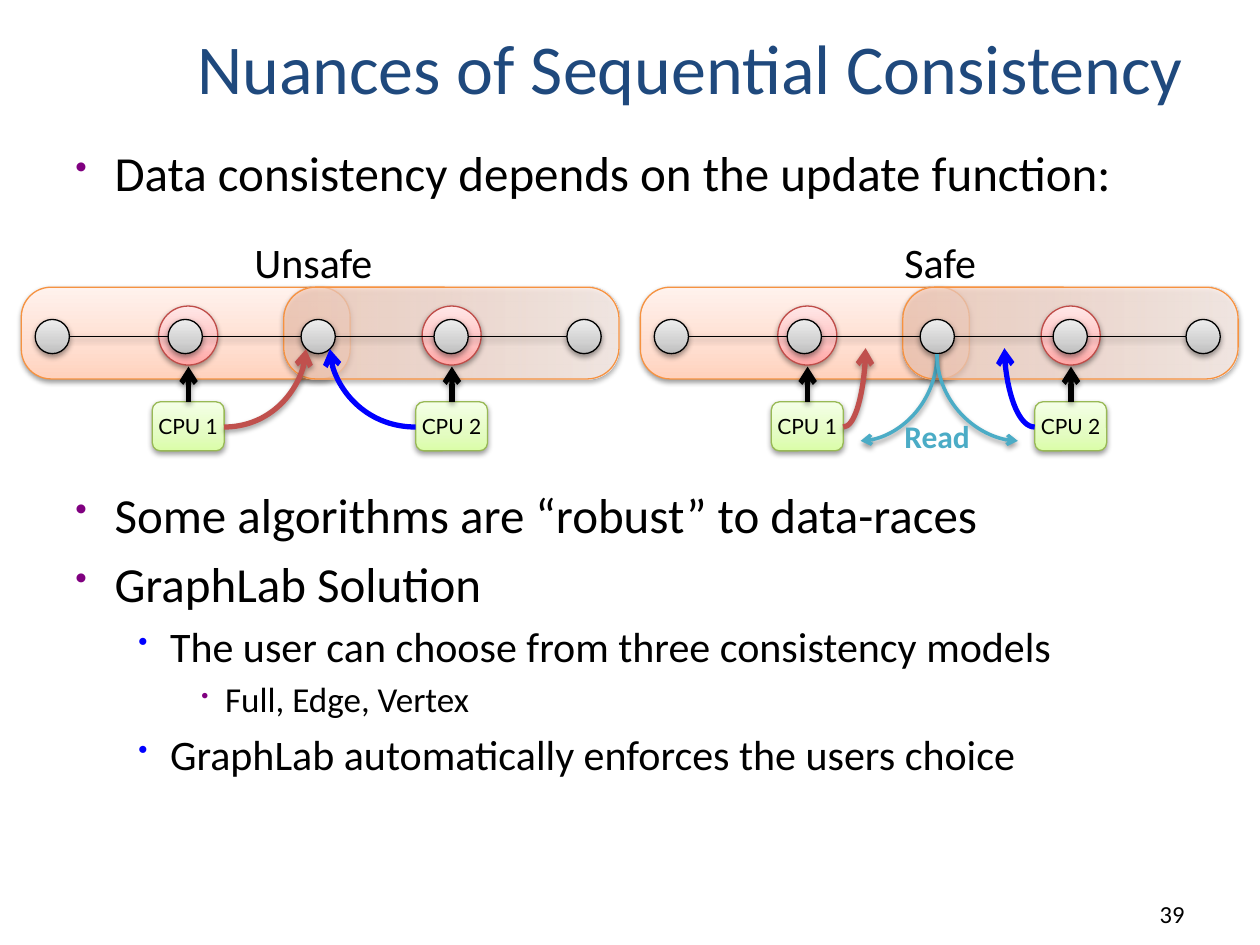
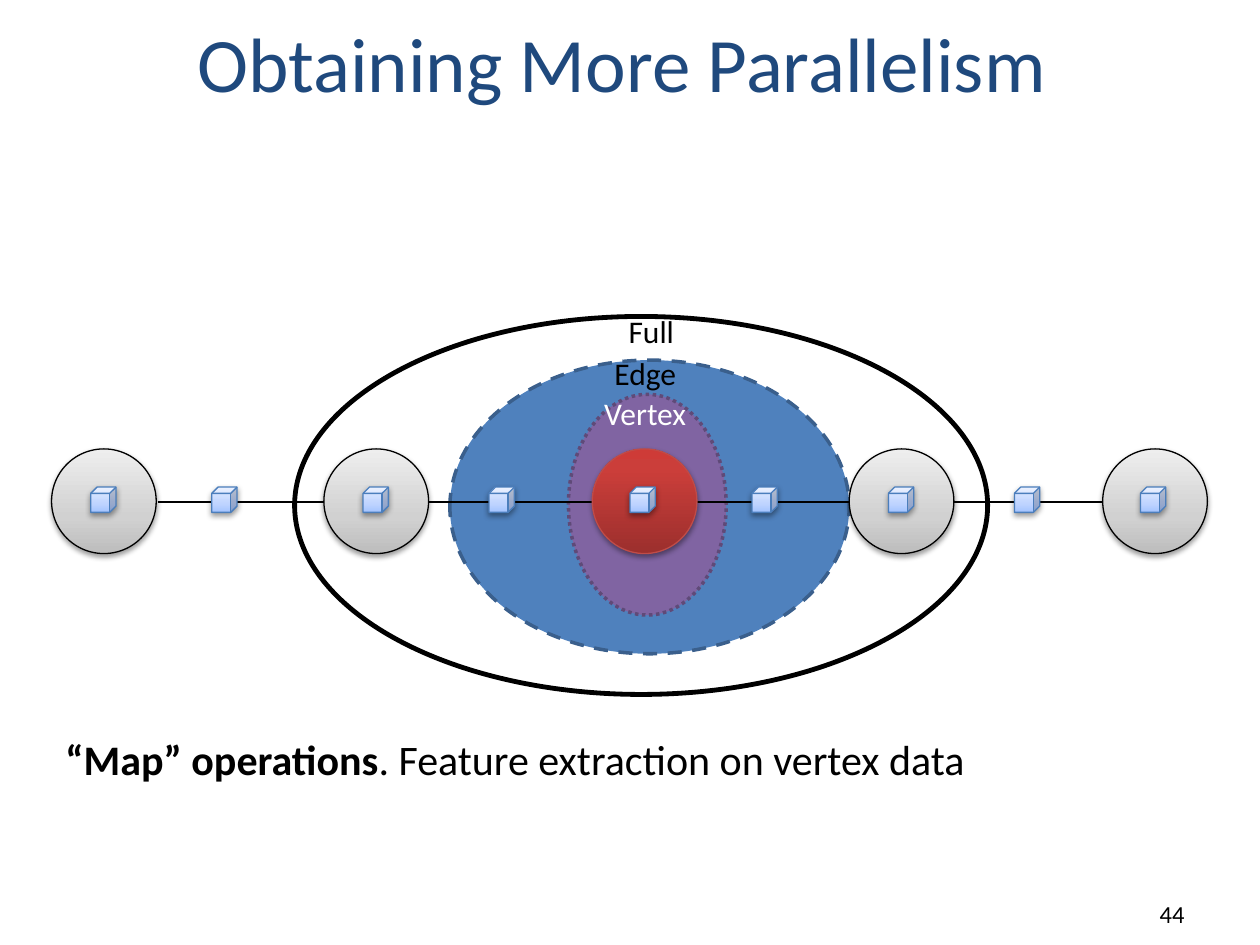
from pptx import Presentation
from pptx.dml.color import RGBColor
from pptx.enum.dml import MSO_LINE
from pptx.enum.shapes import MSO_CONNECTOR, MSO_SHAPE
from pptx.enum.text import MSO_ANCHOR, PP_ALIGN
from pptx.oxml import parse_xml
from pptx.oxml.ns import nsdecls, qn
from pptx.util import Cm, Pt

rgb = RGBColor.from_string

# Shared colours; gradients are lists of (position, colour, opacity) in percent
BLACK, TITLE, RED, BLUE, TEAL = "000000", "1F497D", "C0504D", "0000FF", "4BACC6"
PURPLE = "800080"
ORANGE = [(0, "FFD2BD", 100), (35, "FFDED0", 100), (100, "FFF2ED", 100)]
SHEER = [(0, "FFD2BD", 72), (35, "FFDED0", 70), (100, "FFF2ED", 80)]
PINK = [(0, "FFA6A5", 100), (35, "FFC0BF", 100), (100, "FFE7E7", 100)]
GREEN = [(0, "DAFDA7", 100), (35, "E4FCC2", 100), (100, "F5FFE7", 100)]
GREY = [(0, "BDBDBD", 100), (35, "D1D1D1", 100), (100, "EEEEEE", 100)]
CRIMSON = [(0, "9C2F2D", 100), (80, "CB3E3A", 100), (100, "CE3B37", 100)]
ICE = [(0, "A4C4FF", 100), (35, "BFD4FF", 100), (100, "E6EEFF", 100)]


def style(s, line, width=0.75, fill=None, angle=90, dash=None, arrow=None, shadow=True):
    """Set fill, line, arrowhead ("headEnd" or "tailEnd") and shadow."""
    sp_pr = s._element.spPr
    if isinstance(fill, str):
        s.fill.solid()
        s.fill.fore_color.rgb = rgb(fill)
    elif fill:
        s.fill.gradient()
        s.fill.gradient_angle = angle
        stops = sp_pr.find(qn("a:gradFill")).find(qn("a:gsLst"))
        for old in list(stops):
            stops.remove(old)
        for pos, color, opacity in fill:
            stops.append(parse_xml(
                f'<a:gs {nsdecls("a")} pos="{pos * 1000}"><a:srgbClr val="{color}">'
                f'<a:alpha val="{opacity * 1000}"/></a:srgbClr></a:gs>'))
    s.line.color.rgb = rgb(line)
    s.line.width = Pt(width)
    if dash:
        s.line.dash_style = dash
    if arrow:
        sp_pr.find(qn("a:ln")).append(parse_xml(f'<a:{arrow} {nsdecls("a")} type="arrow"/>'))
    effects = parse_xml(f'<a:effectLst {nsdecls("a")}/>')
    if shadow:
        effects.append(parse_xml(
            f'<a:outerShdw {nsdecls("a")} blurRad="40000" dist="20000" dir="5400000" '
            f'rotWithShape="0"><a:srgbClr val="{BLACK}"><a:alpha val="38000"/></a:srgbClr>'
            '</a:outerShdw>'))
    sp_pr.append(effects)


def write(tf, text, lead="", size=18, color=BLACK, font="Calibri", bold=False,
          align=PP_ALIGN.LEFT, anchor=MSO_ANCHOR.TOP, wrap=True):
    """Add a paragraph, with an optional bold lead, and return it."""
    p = tf.add_paragraph() if tf.text else tf.paragraphs[0]
    p.alignment = align
    tf.vertical_anchor = anchor
    tf.word_wrap = wrap
    for part, heavy in ((lead, True), (text, bold)):
        if part:
            r = p.add_run()
            r.text = part
            r.font.name = font
            r.font.size = Pt(size)
            r.font.bold = heavy
            r.font.color.rgb = rgb(color)
    return p


prs = Presentation()
prs.slide_width, prs.slide_height = Cm(25.4), Cm(19.05)

# Titles and page numbers
for title, size, page in (("Nuances of Sequential Consistency", 40, "39"),
                          ("Obtaining More Parallelism", 44, "44")):
    slide = prs.slides.add_slide(prs.slide_layouts[6])
    tb = slide.shapes.add_textbox(Cm(3.73), Cm(0.2), Cm(20.83), Cm(2.11))
    write(tb.text_frame, title, size=size, color=TITLE, anchor=MSO_ANCHOR.BOTTOM)
    tb = slide.shapes.add_textbox(Cm(18.85), Cm(17.58), Cm(5.28), Cm(1.27))
    write(tb.text_frame, page, size=14, align=PP_ALIGN.RIGHT, anchor=MSO_ANCHOR.BOTTOM)

# Slide 1: bullets, with room for the diagrams after the first
shapes = prs.slides[0].shapes
levels = [  # size, left margin, hanging indent, bullet colour, bullet percent
    (28, 0.79, 0.79, PURPLE, 70),
    (24, 1.91, 0.64, BLUE, 65),
    (20, 3.02, 0.48, PURPLE, 60),
]
bullets = [
    (0, 0, "Data consistency depends on the update function:"),
    (0, 162, "Some algorithms are “robust” to data-races"),
    (0, 5.6, "GraphLab Solution"),
    (1, 4.8, "The user can choose from three consistency models"),
    (2, 4, "Full, Edge, Vertex"),
    (1, 4.8, "GraphLab automatically enforces the users choice"),
]
tf = shapes.add_textbox(Cm(1.27), Cm(2.74), Cm(23.06), Cm(15.44)).text_frame
for level, before, text in bullets:
    size, margin, hang, color, percent = levels[level]
    p = write(tf, text, size=size)
    p.level = level
    p.space_before = Pt(before)
    pPr = p._p.get_or_add_pPr()
    pPr.set("marL", str(Cm(margin)))
    pPr.set("indent", str(-Cm(hang)))
    for xml in (f'<a:buClr {nsdecls("a")}><a:srgbClr val="{color}"/></a:buClr>',
                f'<a:buSzPct {nsdecls("a")} val="{percent * 1000}"/>',
                f'<a:buChar {nsdecls("a")} char="•"/>'):
        pPr.append(parse_xml(xml))

# Slide 1: the unsafe and safe diagrams
# Curves are (start x, start y, end x, end y, colour, width, arrow end, shadow)
unsafe_curves = [(4.52, 8.61, 6.17, 7.04, RED, 3, "tailEnd", True),
                 (8.38, 8.61, 6.65, 7.04, BLUE, 3, "tailEnd", False)]
safe_curves = [(4.52, 8.61, 4.97, 7.02, RED, 3, "tailEnd", True),
               (8.38, 8.61, 7.77, 7.02, BLUE, 3, "tailEnd", False),
               (4.87, 8.89, 6.41, 7.14, TEAL, 2, "headEnd", True),
               (8.04, 8.89, 6.41, 7.14, TEAL, 2, "headEnd", True)]
for left, label, label_x, label_w, curves in (
        (0, "Unsafe", 4.88, 2.92, unsafe_curves),
        (12.48, "Safe", 5.5, 1.98, safe_curves)):
    # Scope, active vertex and processor
    for i, (zone_x, zone_w, adj, fill, angle) in enumerate((
            (0.43, 6.63, 0.325, ORANGE, 90), (5.72, 6.76, 0.347, SHEER, 0))):
        x = left + 5.31 * i
        s = shapes.add_shape(MSO_SHAPE.ROUNDED_RECTANGLE,
                             Cm(left + zone_x), Cm(5.79), Cm(zone_w), Cm(1.85))
        s.adjustments[0] = adj
        style(s, "F69240", fill=fill, angle=angle)
        s = shapes.add_shape(MSO_SHAPE.OVAL, Cm(x + 3.2), Cm(6.17), Cm(1.19), Cm(1.19))
        style(s, "BF4C48", fill=PINK)
        s = shapes.add_shape(MSO_SHAPE.ROUNDED_RECTANGLE,
                             Cm(x + 3.07), Cm(8.1), Cm(1.45), Cm(0.99))
        style(s, "98B955", fill=GREEN)
        write(s.text_frame, f"CPU {i + 1}", size=12, font="Lato", wrap=False,
              align=PP_ALIGN.CENTER, anchor=MSO_ANCHOR.MIDDLE)
        s = shapes.add_connector(MSO_CONNECTOR.STRAIGHT,
                                 Cm(x + 3.8), Cm(8.1), Cm(x + 3.8), Cm(7.39))
        style(s, BLACK, 3, arrow="tailEnd")
    # Chain of vertices
    s = shapes.add_connector(MSO_CONNECTOR.STRAIGHT,
                             Cm(left + 1.4), Cm(6.78), Cm(left + 11.43), Cm(6.78))
    style(s, BLACK)
    for i in range(5):
        s = shapes.add_shape(MSO_SHAPE.OVAL,
                             Cm(left + 0.71 + 2.68 * i), Cm(6.44), Cm(0.69), Cm(0.69))
        style(s, BLACK, fill=GREY)
    # Reads and writes
    for x1, y1, x2, y2, color, width, arrow, shadow in curves:
        s = shapes.add_connector(MSO_CONNECTOR.CURVE,
                                 Cm(left + x1), Cm(y1), Cm(left + x2), Cm(y2))
        s._element.spPr.find(qn("a:prstGeom")).set("prst", "curvedConnector2")
        style(s, color, width, arrow=arrow, shadow=shadow)
    tb = shapes.add_textbox(Cm(left + label_x), Cm(4.65), Cm(label_w), Cm(1.27))
    write(tb.text_frame, label, size=24, wrap=False)
tb = shapes.add_textbox(Cm(17.98), Cm(8.28), Cm(1.85), Cm(1.02))
write(tb.text_frame, "Read", color=TEAL, bold=True, wrap=False)

# Slide 2: nested consistency scopes, each with its label at (x, y, width)
shapes = prs.slides[1].shapes
scopes = [
    ("Full", (5.94, 6.38, 13.97, 7.62), (8.05, 6.17, 10.16),
     "FFFFFF", BLACK, 2.75, None, BLACK),
    ("Edge", (9.07, 7.26, 8.05, 5.92), (9.96, 7.01, 6.1),
     "4F81BD", "3A5F8C", 2, MSO_LINE.DASH, BLACK),
    ("Vertex", (11.46, 7.95, 3.18, 4.45), (11, 7.82, 4.01),
     "8064A2", "5F4A78", 2, MSO_LINE.ROUND_DOT, "FFFFFF"),
]
for name, box, (x, y, w), fill, line, width, dash, color in scopes:
    s = shapes.add_shape(MSO_SHAPE.OVAL, *map(Cm, box))
    style(s, line, width, fill=fill, dash=dash, shadow=False)
    tb = shapes.add_textbox(Cm(x), Cm(y), Cm(w), Cm(1.02))
    write(tb.text_frame, name, color=color, align=PP_ALIGN.CENTER)

# Slide 2: chain of vertices with data on vertices and edges
s = shapes.add_connector(MSO_CONNECTOR.STRAIGHT, Cm(3.18), Cm(10.12), Cm(22.23), Cm(10.12))
style(s, BLACK)
for i, x in enumerate((1.04, 6.53, 11.94, 17.12, 22.23)):
    s = shapes.add_shape(MSO_SHAPE.OVAL, Cm(x), Cm(9.05), Cm(2.11), Cm(2.11))
    if i == 2:
        style(s, "BF4C48", fill=CRIMSON)
    else:
        style(s, BLACK, fill=GREY)
for x in (1.83, 4.27, 7.32, 9.86, 12.7, 15.16, 17.91, 20.45, 22.99):
    s = shapes.add_shape(MSO_SHAPE.CUBE, Cm(x), Cm(9.82), Cm(0.51), Cm(0.51))
    style(s, "4B7EBC", fill=ICE)

# Slide 2: caption
tb = shapes.add_textbox(Cm(1.07), Cm(14.66), Cm(20.52), Cm(1.27))
write(tb.text_frame, ". Feature extraction on vertex data", lead="“Map” operations", size=24)

prs.save("out.pptx")
